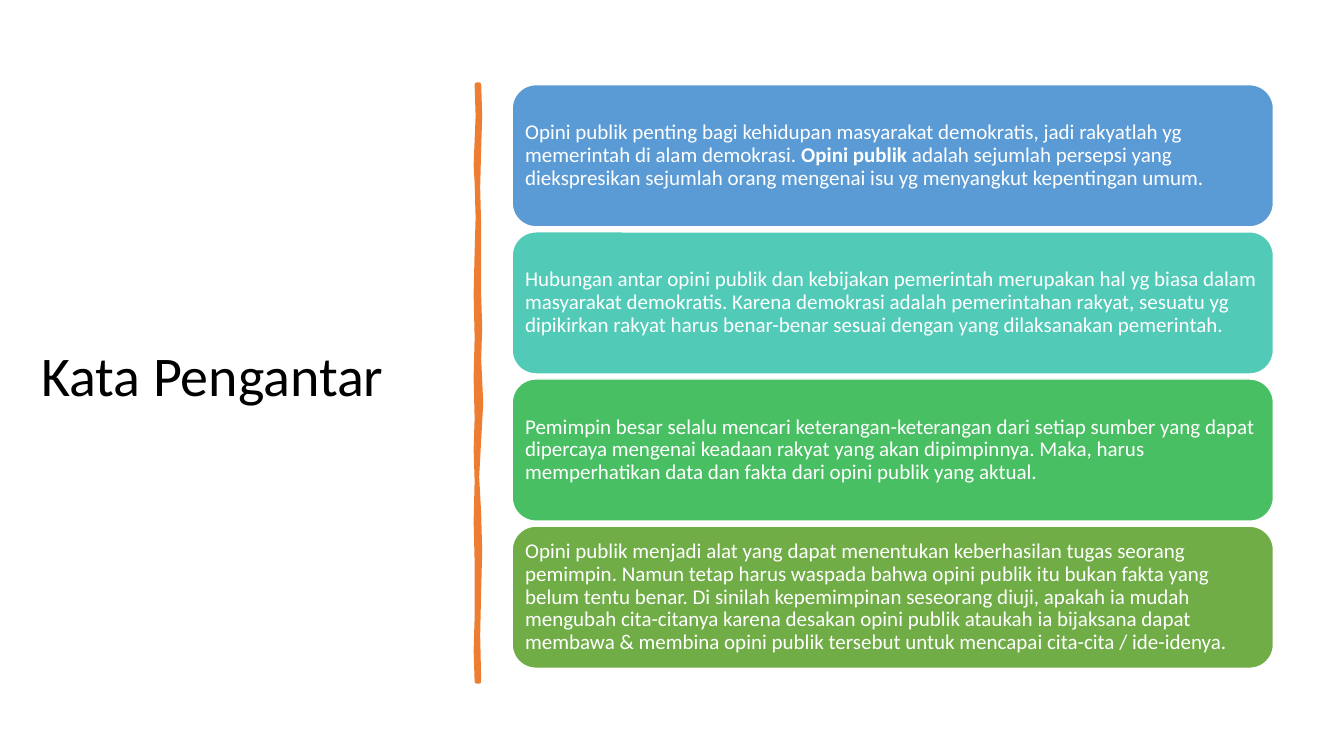
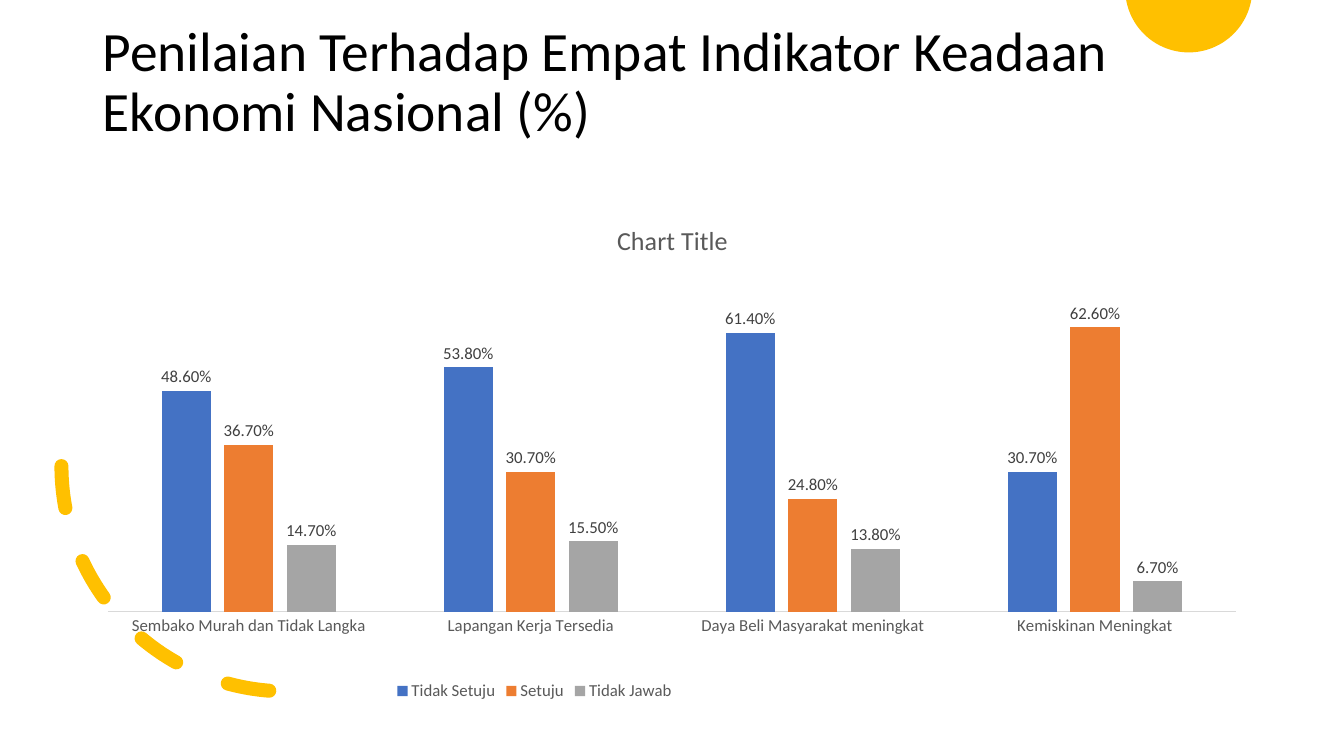
"""Build two slides on public opinion: an introduction and a survey chart."""
from math import asin, cos, pi, sin

from lxml.etree import SubElement
from pptx import Presentation
from pptx.chart.data import CategoryChartData
from pptx.dml.color import RGBColor
from pptx.enum.chart import XL_CHART_TYPE, XL_LABEL_POSITION, XL_LEGEND_POSITION, XL_TICK_MARK
from pptx.enum.dml import MSO_LINE
from pptx.enum.shapes import MSO_SHAPE
from pptx.enum.text import MSO_ANCHOR, PP_ALIGN
from pptx.oxml.ns import qn
from pptx.util import Pt

PX = 9144
FACE = "Calibri"
BLACK, WHITE, GRAY, DARK, PALE = "000000", "FFFFFF", "595959", "404040", "D9D9D9"
ORANGE, GOLD = "ED7D31", "FFC000"


def paint(fill, color):
    fill.solid()
    fill.fore_color.rgb = RGBColor.from_string(color)


def write(frame, runs, size, color):
    frame.word_wrap = True
    frame.vertical_anchor = MSO_ANCHOR.MIDDLE
    para = frame.paragraphs[0]
    para.alignment = PP_ALIGN.LEFT
    para.line_spacing = 0.9
    for words, bold in runs:
        run = para.add_run()
        run.text = words
        run.font.name, run.font.size, run.font.bold = FACE, Pt(size), bold
        paint(run.font.fill, color)


deck = Presentation()
deck.slide_width, deck.slide_height = 1333 * PX, 750 * PX

titles = [
    ("Kata Pengantar", 40, (31, 70, 478, 611), 5),
    ("Penilaian Terhadap Empat Indikator Keadaan Ekonomi Nasional (%)", 39.6, (92, 40, 1150, 145), 65),
]
slides = []
for words, size, place, base in titles:
    slide = deck.slides.add_slide(deck.slide_layouts[6])
    box = slide.shapes.add_textbox(*[n * PX for n in place])
    box.text_frame.margin_bottom = base * PX
    write(box.text_frame, [(words, False)], size, BLACK)
    slides.append(slide)
intro, survey = slides

right = [(475, 84), (476, 115), (475, 146), (474, 186), (475, 226), (475, 294), (476, 325),
         (475, 356), (477, 400), (475, 436), (473, 473), (475, 510), (476, 547), (475, 584),
         (474, 630), (475, 676)]
left = [(473, 676), (472, 645), (473, 613), (473, 557), (472, 517), (473, 477), (472, 446),
        (473, 415), (472, 375), (473, 335), (472, 292), (473, 250), (474, 216), (473, 181),
        (472, 164), (474, 115), (473, 84)]
tilt = asin(11 / 63)
turns = [tilt + (pi - 2 * tilt) * i / 60 for i in range(61)]
disc = [(1179 + 63 * cos(a), 63 * sin(a) - 11) for a in turns]

for slide, points, color, width in [(intro, right + left, ORANGE, 3.25), (survey, disc, GOLD, 0)]:
    spots = [(round(x * PX), round(y * PX)) for x, y in points]
    pen = slide.shapes.build_freeform(*spots[0])
    pen.add_line_segments(spots[1:], close=True)
    shape = pen.convert_to_shape()
    shape.shadow.inherit = False
    paint(shape.fill, color)
    if width:
        paint(shape.line.fill, color)
        shape.line.width = Pt(width)
    else:
        shape.line.fill.background()

cards = [
    ("5B9BD5", [
        ("Opini publik penting bagi kehidupan masyarakat demokratis, jadi rakyatlah yg memerintah di alam demokrasi. ", False),
        ("Opini publik ", True),
        ("adalah sejumlah persepsi yang diekspresikan sejumlah orang mengenai isu yg menyangkut kepentingan umum.", False)]),
    ("52CAB8", [
        ("Hubungan antar opini publik dan kebijakan pemerintah merupakan hal yg biasa dalam masyarakat demokratis. "
         "Karena demokrasi adalah pemerintahan rakyat, sesuatu yg dipikirkan rakyat harus benar-benar sesuai "
         "dengan yang dilaksanakan pemerintah.", False)]),
    ("49BF64", [
        ("Pemimpin besar selalu mencari keterangan-keterangan dari setiap sumber yang dapat dipercaya mengenai "
         "keadaan rakyat yang akan dipimpinnya. Maka, harus memperhatikan data dan fakta dari opini publik "
         "yang aktual.", False)]),
    ("70AD47", [
        ("Opini publik menjadi alat yang dapat menentukan keberhasilan tugas seorang pemimpin. Namun tetap harus "
         "waspada bahwa opini publik itu bukan fakta yang belum tentu benar. Di sinilah kepemimpinan seseorang "
         "diuji, apakah ia mudah mengubah cita-citanya karena desakan opini publik ataukah ia bijaksana dapat "
         "membawa & membina opini publik tersebut untuk mencapai cita-cita / ide-idenya.", False)]),
]
for i, (color, runs) in enumerate(cards):
    card = intro.shapes.add_shape(MSO_SHAPE.ROUNDED_RECTANGLE, 508 * PX, (84 + 146 * i) * PX, 755 * PX, 141 * PX)
    card.shadow.inherit = False
    paint(card.fill, color)
    paint(card.line.fill, WHITE)
    card.line.width = Pt(1)
    frame = card.text_frame
    frame.margin_left = frame.margin_right = frame.margin_top = frame.margin_bottom = 6 * PX
    write(frame, runs, 15, WHITE)

arc = survey.shapes.add_shape(MSO_SHAPE.ARC, 61 * PX, 239 * PX, 447 * PX, 447 * PX)
arc.shadow.inherit = False
arc.rotation = 90
arc._element.spPr.find(qn("a:xfrm")).set("flipV", "1")
arc.fill.background()
paint(arc.line.fill, GOLD)
arc.line.width = Pt(10)
arc.line.dash_style = MSO_LINE.DASH
arc._element.spPr.find(qn("a:ln")).set("cap", "rnd")

data = CategoryChartData(number_format="0.00%")
data.categories = ["Sembako Murah dan Tidak Langka", "Lapangan Kerja Tersedia",
                   "Daya Beli Masyarakat meningkat", "Kemiskinan Meningkat"]
data.add_series("Tidak Setuju", [0.486, 0.538, 0.614, 0.307])
data.add_series("Setuju", [0.367, 0.307, 0.248, 0.626])
data.add_series("Tidak Jawab", [0.147, 0.155, 0.138, 0.067])
chart = survey.shapes.add_chart(
    XL_CHART_TYPE.COLUMN_CLUSTERED, 92 * PX, 200 * PX, 1150 * PX, 510 * PX, data).chart

chart.has_title = True
chart.chart_title.include_in_layout = False
head = chart.chart_title.text_frame.paragraphs[0].add_run()
head.text = "Chart Title"
head.font.bold = False

chart.has_legend = True
legend = chart.legend
legend.position = XL_LEGEND_POSITION.BOTTOM
legend.include_in_layout = False

base = chart.category_axis
base.major_tick_mark = XL_TICK_MARK.NONE
paint(base.format.line.fill, PALE)
base.format.line.width = Pt(0.75)
scale = chart.value_axis
scale.visible = False
scale.has_major_gridlines = False
scale.minimum_scale, scale.maximum_scale = 0, 0.7

plot = chart.plots[0]
plot.vary_by_categories = False
plot.gap_width, plot.overlap = 219, -27
plot.has_data_labels = True
labels = plot.data_labels
labels.show_value = True
labels.number_format, labels.number_format_is_linked = "0.00%", False
labels.position = XL_LABEL_POSITION.OUTSIDE_END
for series, color in zip(plot.series, ["4472C4", ORANGE, "A5A5A5"]):
    paint(series.format.fill, color)

for font, size, color in [(chart.font, 10, BLACK), (head.font, 18.6, GRAY), (legend.font, 12, GRAY),
                          (base.tick_labels.font, 12, GRAY), (labels.font, 12, DARK)]:
    font.name, font.size = FACE, Pt(size)
    paint(font.fill, color)

area = plot._element.getparent()
for parent, index, rules in [
    (area, 0, [("layoutTarget", "inner"), ("xMode", "edge"), ("yMode", "edge"),
               ("x", "0.013"), ("y", "0.179"), ("w", "0.973"), ("h", "0.619")]),
    (legend._element, 1, [("xMode", "edge"), ("yMode", "edge"), ("x", "0.258"), ("y", "0.925")]),
]:
    for old in parent.findall(qn("c:layout")):
        parent.remove(old)
    layout = SubElement(parent, qn("c:layout"))
    parent.insert(index, layout)
    manual = SubElement(layout, qn("c:manualLayout"))
    for name, value in rules:
        SubElement(manual, qn("c:" + name)).set("val", value)

deck.save("out.pptx")
